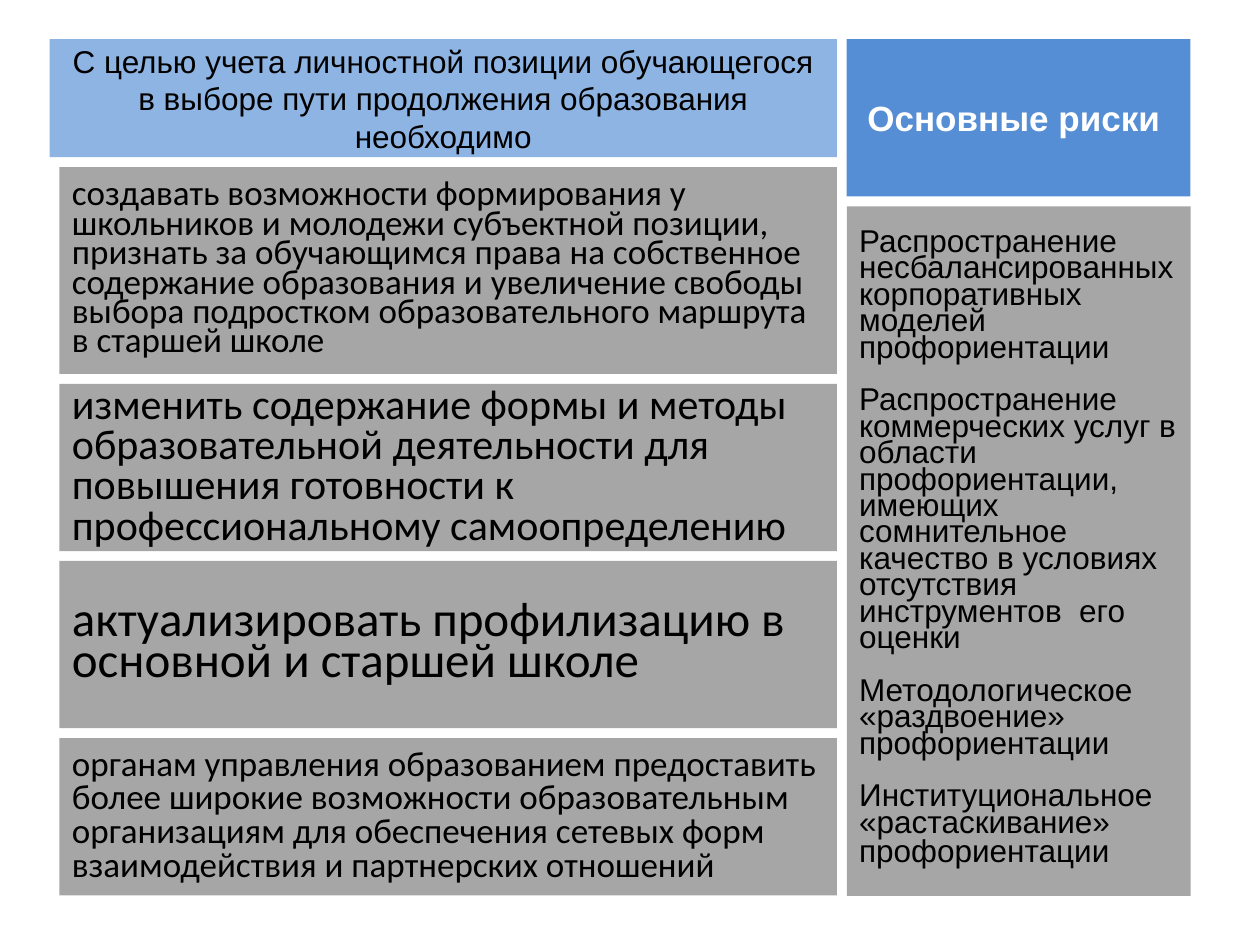
from lxml.etree import SubElement
from pptx import Presentation
from pptx.dml.color import RGBColor
from pptx.enum.shapes import MSO_SHAPE
from pptx.enum.text import MSO_ANCHOR as Anchor, MSO_AUTO_SIZE as AutoSize, PP_ALIGN as Align
from pptx.oxml.ns import qn
from pptx.util import Cm, Pt

BLACK = RGBColor(0x00, 0x00, 0x00)
WHITE = RGBColor(0xFF, 0xFF, 0xFF)
GREY = RGBColor(0xA6, 0xA6, 0xA6)
LIGHT_BLUE = RGBColor(0x8E, 0xB4, 0xE3)
BLUE = RGBColor(0x55, 0x8E, 0xD5)

# Grid, in centimetres
GAP = 0.2
TOP, BOTTOM = 0.79, 18.06
LEFT, INDENT, LEFT_END = 1.0, 1.2, 16.87
RISK_LEFT, RISK_W = LEFT_END + GAP, 6.93
TITLE_H, RISK_HEAD_H = 2.38, 3.17

TITLE = ["С целью учета личностной позиции обучающегося",
         "в выборе пути продолжения образования необходимо"]

# Measures: height, font size, line spacing, paragraphs
MEASURES = [
    (4.17, 20, 0.7, [
        "создавать возможности формирования у школьников и молодежи субъектной позиции,",
        "признать за обучающимся права на собственное содержание образования и "
        "увеличение свободы выбора подростком образовательного маршрута в старшей школе"]),
    (3.37, 24, 0.8, [
        "изменить содержание формы и методы образовательной деятельности для "
        "повышения готовности к профессиональному самоопределению"]),
    (3.37, 28, 0.7, ["актуализировать профилизацию в основной и старшей школе"]),
    (3.17, 20, 0.8, [
        "органам управления образованием предоставить более широкие возможности "
        "образовательным организациям для обеспечения сетевых форм взаимодействия "
        "и партнерских отношений"]),
]

RISKS = [
    "Распространение несбалансированных корпоративных моделей профориентации",
    "Распространение коммерческих услуг в области профориентации, имеющих "
    "сомнительное качество в условиях отсутствия инструментов  его оценки",
    "Методологическое «раздвоение» профориентации",
    "Институциональное «растаскивание» профориентации",
]


def place(sp, left, top, width, height, fill):
    sp.left, sp.top, sp.width, sp.height = Cm(left), Cm(top), Cm(width), Cm(height)
    sp.fill.solid()
    sp.fill.fore_color.rgb = fill
    sp.line.fill.background()


def add_run(p, text, font, size, color=BLACK, bold=False):
    r = p.add_run()
    r.text = text
    r.font.name, r.font.size, r.font.bold = font, Pt(size), bold
    r.font.color.rgb = color


def write(sp, texts, font, size, spacing=1.0, align=Align.LEFT, gap=0, **style):
    tf = sp.text_frame
    tf.word_wrap = True
    tf.auto_size = AutoSize.NONE
    tf.vertical_anchor = Anchor.MIDDLE
    tf.margin_left = tf.margin_right = Cm(0.25)
    tf.margin_top = tf.margin_bottom = Cm(0.13)
    for i, text in enumerate(texts):
        p = tf.add_paragraph() if i else tf.paragraphs[0]
        p.alignment, p.line_spacing = align, spacing
        p.space_before = Pt(gap if i else 0)
        add_run(p, text, font, size, **style)


def add_box(slide, left, top, width, height, fill):
    sp = slide.shapes.add_shape(MSO_SHAPE.RECTANGLE, 0, 0, 0, 0)
    sp.shadow.inherit = False
    place(sp, left, top, width, height, fill)
    return sp


def remove_bullets(tf):
    for p in tf.paragraphs:
        pPr = p._p.get_or_add_pPr()
        pPr.set("marL", "0")
        pPr.set("indent", "0")
        SubElement(pPr, qn("a:buNone"))


def add_measures(slide):
    top = TOP + TITLE_H + GAP
    for height, size, spacing, texts in MEASURES:
        sp = add_box(slide, INDENT, top, LEFT_END - INDENT, height, GREY)
        write(sp, texts, "Calibri", size, spacing)
        top += height + GAP


def add_risks(slide):
    # Column heading
    head = add_box(slide, RISK_LEFT, TOP, RISK_W, RISK_HEAD_H, BLUE)
    write(head, ["Основные риски "], "Arial", 20, align=Align.CENTER, color=WHITE, bold=True)

    # List of risks
    body = slide.placeholders[1]
    top = TOP + RISK_HEAD_H + GAP
    place(body, RISK_LEFT, top, RISK_W, BOTTOM - top, GREY)
    write(body, RISKS, "Arial", 18, 0.7, gap=15)
    tf = body.text_frame
    tf.vertical_anchor = Anchor.TOP
    tf.margin_top = Cm(0.5)
    add_run(tf.paragraphs[-1], " ", "Calibri", 20)
    remove_bullets(tf)


def main():
    prs = Presentation()
    prs.slide_width, prs.slide_height = Cm(25.4), Cm(19.05)
    slide = prs.slides.add_slide(prs.slide_layouts[1])

    # Title band
    title = slide.shapes.title
    place(title, LEFT, TOP, LEFT_END - LEFT, TITLE_H, LIGHT_BLUE)
    write(title, TITLE, "Arial", 18, align=Align.CENTER)

    add_measures(slide)
    add_risks(slide)
    prs.save("out.pptx")


if __name__ == "__main__":
    main()
